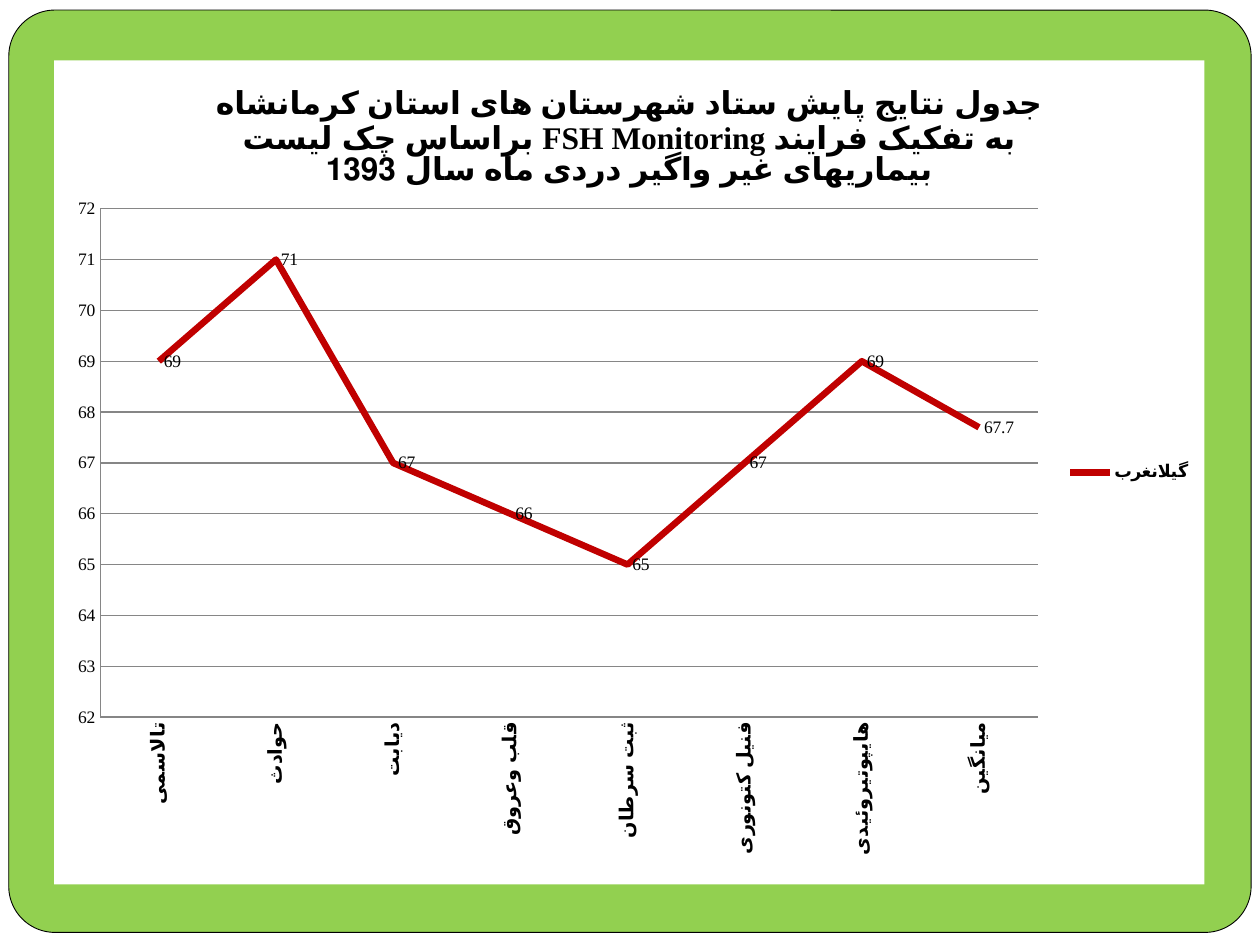
"""Build a framed slide with a line chart of monitoring results by process."""
from lxml import etree
from pptx import Presentation
from pptx import util as u
from pptx.chart import data as chart_data
from pptx.dml.color import RGBColor
from pptx.enum import chart as chart_enum, shapes
from pptx.oxml import parse_xml
from pptx.oxml.ns import nsdecls, qn

TITLE = [
    "جدول نتایج پایش ستاد شهرستان های استان کرمانشاه",
    "براساس چک لیست FSH Monitoring به تفکیک فرایند",
    "بیماریهای غیر واگیر دردی ماه سال 1393",
]
SERIES = "گیلانغرب"
RESULTS = [
    ("تالاسمی", 69), ("حوادث", 71), ("دیابت", 67), ("قلب وعروق", 66),
    ("ثبت سرطان", 65), ("فنیل کتونوری", 67), ("هایپوتیروئیدی", 69),
    ("میانگین", 67.7),
]
COLORS = {"frame": "92D050", "paper": "FFFFFF", "ink": "000000",
          "line": "C00000", "grid": "868686"}
FONT = "Times New Roman"
WIDTH, HEIGHT = 10, 7.5
PLOT = {"x": 0.04, "y": 0.18, "w": 0.815, "h": 0.617}


def color(name):
    return RGBColor.from_string(COLORS[name])


def style_font(font, size=10, bold=False):
    font.name, font.size, font.bold = FONT, u.Pt(size), bold
    font.color.rgb = color("ink")


def write(para, text, **style):
    span = para.add_run()
    span.text = text
    style_font(span.font, **style)


def style_line(line, name, width):
    line.color.rgb = color(name)
    line.width = u.Pt(width)


def add_panel(page, kind, inset_x, inset_y, fill):
    box = page.shapes.add_shape(
        kind, u.Inches(inset_x), u.Inches(inset_y),
        u.Inches(WIDTH - 2 * inset_x), u.Inches(HEIGHT - 2 * inset_y - (0.02 if inset_y else 0)))
    box.shadow.inherit = False
    box.fill.solid()
    box.fill.fore_color.rgb = color(fill)
    return box


def place_plot(chart):
    area = chart._chartSpace.chart.plotArea
    for old in area.findall(qn("c:layout")):
        area.remove(old)
    layout = parse_xml(f"<c:layout {nsdecls('c')}><c:manualLayout/></c:layout>")
    settings = {"layoutTarget": "inner", "xMode": "edge", "yMode": "edge", **PLOT}
    for tag, value in settings.items():
        etree.SubElement(layout[0], qn(f"c:{tag}")).set("val", str(value))
    area.insert(0, layout)


def fill_chart(chart):
    fill = parse_xml(
        f"<c:spPr {nsdecls('c', 'a')}><a:solidFill><a:srgbClr val=\"{COLORS['paper']}\"/>"
        "</a:solidFill><a:ln><a:noFill/></a:ln></c:spPr>")
    chart._chartSpace.chart.addnext(fill)


def add_results_chart(page):
    data = chart_data.CategoryChartData()
    data.categories = [name for name, _ in RESULTS]
    data.add_series(SERIES, [value for _, value in RESULTS])
    chart = page.shapes.add_chart(
        chart_enum.XL_CHART_TYPE.LINE, u.Inches(0.43), u.Inches(0.48),
        u.Inches(9.13), u.Inches(6.54), data).chart
    style_font(chart.font)
    fill_chart(chart)
    place_plot(chart)

    frame = chart.chart_title.text_frame
    for index, text in enumerate(TITLE):
        para = frame.add_paragraph() if index else frame.paragraphs[0]
        write(para, text, size=18, bold=True)
    chart.chart_title.include_in_layout = False

    chart.has_legend = True
    chart.legend.position = chart_enum.XL_LEGEND_POSITION.RIGHT
    chart.legend.include_in_layout = False
    style_font(chart.legend.font, bold=True)

    values, names = chart.value_axis, chart.category_axis
    values.minimum_scale, values.maximum_scale, values.major_unit = 62, 72, 1
    values.has_major_gridlines = True
    style_line(values.major_gridlines.format.line, "grid", 0.75)
    for axis in (values, names):
        axis.major_tick_mark = chart_enum.XL_TICK_MARK.NONE
        style_line(axis.format.line, "grid", 0.75)
    style_font(values.tick_labels.font)
    style_font(names.tick_labels.font, size=11, bold=True)
    names._element.find(qn("c:txPr")).find(qn("a:bodyPr")).set("rot", "-5400000")

    plot = chart.plots[0]
    plot.vary_by_categories = False
    series = plot.series[0]
    series.smooth = False
    series.marker.style = chart_enum.XL_MARKER_STYLE.NONE
    style_line(series.format.line, "line", 3.75)
    labels = series.data_labels
    labels.show_value = True
    labels.position = chart_enum.XL_LABEL_POSITION.RIGHT
    style_font(labels.font)


def main():
    deck = Presentation()
    deck.slide_width, deck.slide_height = u.Inches(WIDTH), u.Inches(HEIGHT)
    page = deck.slides.add_slide(deck.slide_layouts[6])
    page.background.fill.solid()
    page.background.fill.fore_color.rgb = color("frame")
    paper = add_panel(page, shapes.MSO_SHAPE.RECTANGLE, 0, 0, "paper")
    paper.line.fill.background()
    border = add_panel(page, shapes.MSO_SHAPE.ROUNDED_RECTANGLE, 0.07, 0.08, "frame")
    border.adjustments[0] = 0.05
    style_line(border.line, "ink", 0.5)
    add_results_chart(page)
    deck.save("out.pptx")


if __name__ == "__main__":
    main()
